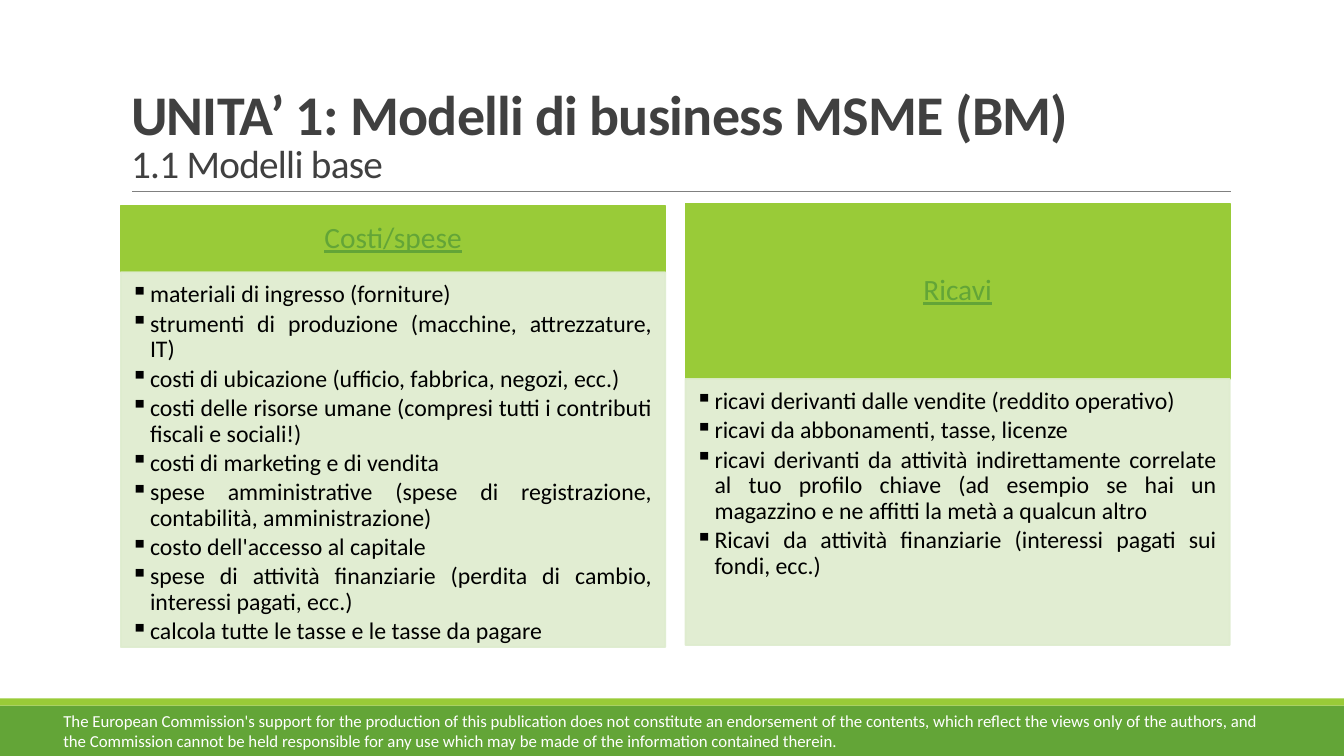
from dataclasses import dataclass

from lxml import etree
from pptx import Presentation
from pptx import util as u
from pptx.dml.color import RGBColor
from pptx.enum import shapes, text
from pptx.oxml.ns import qn


@dataclass(frozen=True)
class Theme:
    """Colours, font and type sizes of the slide."""
    font: str = "Calibri"
    dark_green: str = "63A537"
    lime: str = "99CB38"
    pale: str = "DEECCE"
    grey: str = "404040"
    rule: str = "808080"
    black: str = "000000"
    white: str = "FFFFFF"
    title: int = 40
    subtitle: int = 28
    heading: int = 21
    body: int = 17
    note: int = 12


THEME = Theme()
CELL = 0.1
COLUMNS, ROWS = 133.33, 75
PANEL_WIDTH = 54
PANEL_LEFTS = (12, 68)

PANELS = [
    ("Costi/spese", 20.4, 6.6, 37.2, [
        "materiali di ingresso (forniture)",
        "strumenti di produzione (macchine, attrezzature, IT)",
        "costi di ubicazione (ufficio, fabbrica, negozi, ecc.)",
        "costi delle risorse umane (compresi tutti i contributi fiscali e sociali!)",
        "costi di marketing e di vendita",
        "spese amministrative (spese di registrazione, contabilità, amministrazione)",
        "costo dell'accesso al capitale",
        "spese di attività finanziarie (perdita di cambio, interessi pagati, ecc.)",
        "calcola tutte le tasse e le tasse da pagare",
    ]),
    ("Ricavi", 20.2, 17.4, 26.4, [
        "ricavi derivanti dalle vendite (reddito operativo)",
        "ricavi da abbonamenti, tasse, licenze",
        "ricavi derivanti da attività indirettamente correlate al tuo profilo chiave "
        "(ad esempio se hai un magazzino e ne affitti la metà a qualcun altro",
        "Ricavi da attività finanziarie (interessi pagati sui fondi, ecc.)",
    ]),
]
DISCLAIMER = (
    "The European Commission's support for the production of this publication does not "
    "constitute an endorsement of the contents, which reflect the views only of the authors, "
    "and the Commission cannot be held responsible for any use which may be made of the "
    "information contained therein."
)


def cells(*counts):
    """Turn grid counts into lengths."""
    return [u.Inches(count * CELL) for count in counts]


def write(paragraph, words, size, color, bold=False, underline=False, spacing=None,
          align=text.PP_ALIGN.LEFT, line=1.0, after=0, bullet=None):
    """Add a formatted run to a paragraph."""
    paragraph.alignment = align
    paragraph.line_spacing = line
    paragraph.space_before = u.Pt(0)
    paragraph.space_after = u.Pt(after)
    run = paragraph.add_run()
    run.text = words
    font = run.font
    font.name, font.size = THEME.font, u.Pt(size)
    font.bold, font.underline = bold, underline
    font.color.rgb = RGBColor.from_string(color)
    if spacing is not None:
        font._element.set("spc", str(spacing))
    if bullet:
        properties = paragraph._p.get_or_add_pPr()
        indent = u.Inches(0.19)
        properties.set("marL", str(indent))
        properties.set("indent", str(-indent))
        etree.SubElement(properties, qn("a:buChar")).set("char", bullet)


class SlideBuilder:
    """Holds the theme and the current slide."""

    def __init__(self, deck, theme):
        """Start a title-only slide."""
        self.theme = theme
        self.slide = deck.slides.add_slide(deck.slide_layouts[5])

    def frame(self, shape, anchor, insets=(0.1, 0.05, 0.1, 0.05)):
        """Prepare the text frame of a shape."""
        frame = shape.text_frame
        frame.word_wrap = True
        frame.auto_size = text.MSO_AUTO_SIZE.NONE
        frame.vertical_anchor = anchor
        (frame.margin_left, frame.margin_top,
         frame.margin_right, frame.margin_bottom) = map(u.Inches, insets)
        return frame

    def title(self, heading, subheading):
        """Fill the title placeholder with two lines."""
        holder = self.slide.shapes.title
        holder.left, holder.top, holder.width, holder.height = cells(12, 3.1, 110, 15.9)
        paragraph = self.frame(holder, text.MSO_ANCHOR.BOTTOM).paragraphs[0]
        look = dict(color=self.theme.grey, spacing=-50, line=0.85)
        write(paragraph, heading, self.theme.title, bold=True, **look)
        paragraph.add_line_break()
        write(paragraph, subheading, self.theme.subtitle, **look)

    def block(self, left, top, width, height, color, outline=False, opacity=None):
        """Draw a filled rectangle."""
        shape = self.slide.shapes.add_shape(
            shapes.MSO_SHAPE.RECTANGLE, *cells(left, top, width, height))
        shape.shadow.inherit = False
        fills = [shape.fill]
        if outline:
            shape.line.width = u.Pt(1.25)
            fills.append(shape.line.fill)
        else:
            shape.line.fill.background()
        for fill in fills:
            fill.solid()
            fill.fore_color.rgb = RGBColor.from_string(color)
        if opacity:
            for tint in shape._element.spPr.iter(qn("a:srgbClr")):
                etree.SubElement(tint, qn("a:alpha")).set("val", str(opacity * 1000))
        return shape

    def rule(self, left, right, row):
        """Draw a thin horizontal line."""
        line = self.slide.shapes.add_connector(
            shapes.MSO_CONNECTOR.STRAIGHT, *cells(left, row, right, row))
        line.line.color.rgb = RGBColor.from_string(self.theme.rule)
        line.line.width = u.Pt(0.5)
        etree.SubElement(line._element.spPr, qn("a:effectLst"))

    def panel(self, left, heading, top, head_rows, body_rows, items):
        """Draw a heading block above a bulleted block."""
        head = self.block(left, top, PANEL_WIDTH, head_rows, self.theme.lime, outline=True)
        frame = self.frame(head, text.MSO_ANCHOR.MIDDLE, (0.16, 0.09, 0.16, 0.09))
        write(frame.paragraphs[0], heading, self.theme.heading, self.theme.dark_green,
              underline=True, align=text.PP_ALIGN.CENTER, line=0.9)
        body = self.block(left, top + head_rows, PANEL_WIDTH, body_rows, self.theme.pale,
                          outline=True, opacity=90)
        frame = self.frame(body, text.MSO_ANCHOR.TOP, (0.1, 0.1, 0.13, 0.15))
        for index, item in enumerate(items):
            paragraph = frame.add_paragraph() if index else frame.paragraphs[0]
            write(paragraph, item, self.theme.body, self.theme.black, bullet="▪",
                  align=text.PP_ALIGN.JUSTIFY, line=0.9, after=2.55)

    def note(self, words, left, top, width, height):
        """Add small text on the bottom band."""
        box = self.slide.shapes.add_textbox(*cells(left, top, width, height))
        frame = self.frame(box, text.MSO_ANCHOR.TOP)
        write(frame.paragraphs[0], words, self.theme.note, self.theme.white)


def main():
    """Build and save the slide."""
    deck = Presentation()
    deck.slide_width, deck.slide_height = cells(COLUMNS, ROWS)
    builder = SlideBuilder(deck, THEME)
    builder.block(0, 70, COLUMNS, 5, THEME.dark_green)
    builder.block(0, 69.3, COLUMNS, 0.7, THEME.lime)
    builder.rule(13.1, 122.1, 19)
    builder.title("UNITA’ 1: Modelli di business MSME (BM)", "1.1 Modelli base")
    for left, panel in zip(PANEL_LEFTS, PANELS):
        builder.panel(left, *panel)
    builder.note(DISCLAIMER, 5.3, 70, 123, 5)
    deck.save("out.pptx")


if __name__ == "__main__":
    main()
